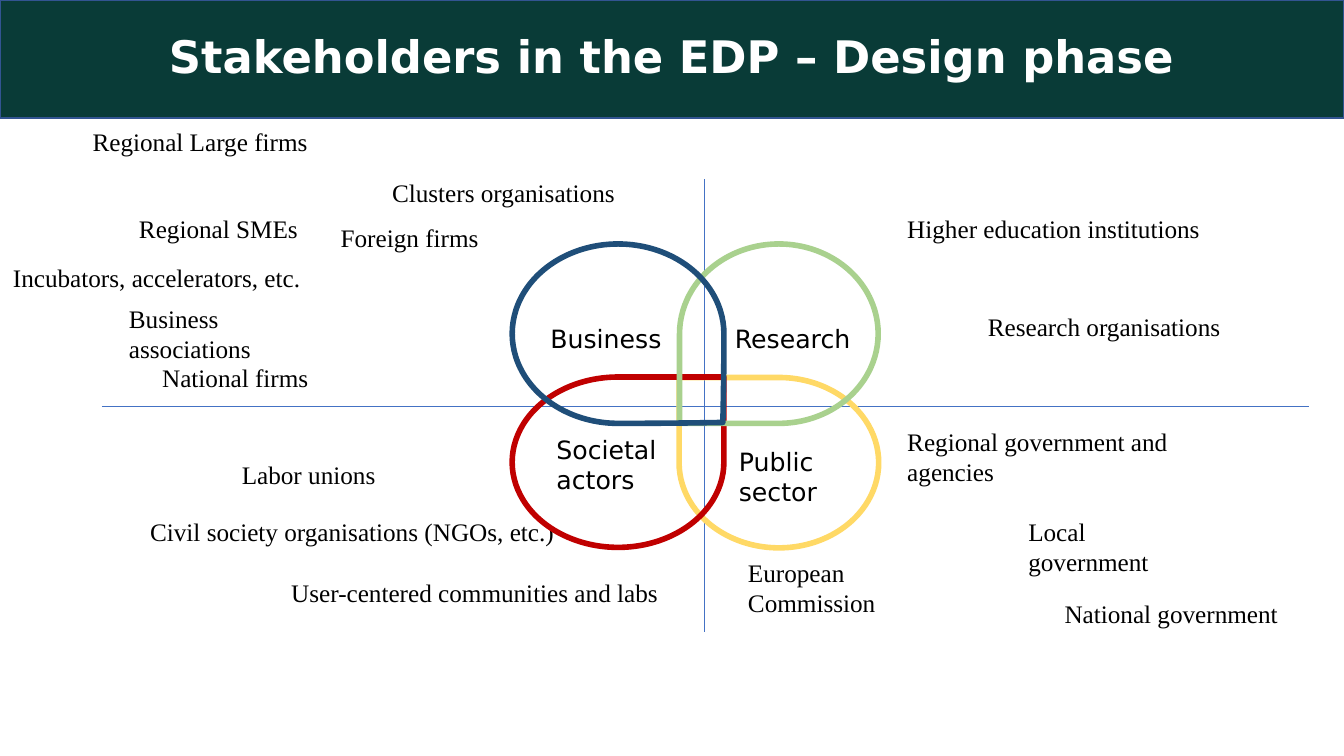
import pptx
import pptx.dml.color
import pptx.enum.shapes
import pptx.enum.text
import pptx.util
from lxml import etree

Inches = pptx.util.Inches
ALIGN = pptx.enum.text.PP_ALIGN

COLORS = {
    "band": "093B37", "band_edge": "325491", "axis": "4472C4",
    "white": "FFFFFF", "black": "000000", "public": "FFD966",
    "societal": "C00000", "research": "A9D18E", "business": "1F4E79",
}
TITLE = "Stakeholders in the EDP – Design phase"
AXES = [(6.99, 1.78, 6.99, 6.27), (1.01, 4.03, 12.98, 4.03)]
STAKEHOLDERS = [
    ("Higher education institutions", 8.9, 2.07, 3.13, ALIGN.JUSTIFY),
    ("Research organisations", 9.7, 3.04, 2.53, ALIGN.JUSTIFY),
    ("Regional government and agencies", 8.9, 4.18, 3.7, ALIGN.LEFT),
    ("Local government", 10.1, 5.07, 2.02, ALIGN.LEFT),
    ("European Commission", 7.32, 5.48, 2.48, ALIGN.LEFT),
    ("National government", 10.46, 5.89, 2.34, ALIGN.LEFT),
    ("Regional SMEs", 1.28, 2.07, 1.79, ALIGN.LEFT),
    ("Regional Large firms", 0.82, 1.2, 2.36, ALIGN.LEFT),
    ("Business associations", 1.18, 2.96, 2.35, ALIGN.LEFT),
    ("Clusters organisations", 3.79, 1.71, 2.43, ALIGN.LEFT),
    ("Incubators, accelerators, etc.", 0.03, 2.55, 3.15, ALIGN.LEFT),
    ("Foreign firms", 3.28, 2.16, 1.58, ALIGN.LEFT),
    ("National firms", 1.51, 3.55, 1.67, ALIGN.LEFT),
    ("Civil society organisations (NGOs, etc.)", 1.39, 5.07, 4.25, ALIGN.JUSTIFY),
    ("Labor unions", 2.3, 4.51, 1.54, ALIGN.JUSTIFY),
    ("User-centered communities and labs", 2.79, 5.68, 3.88, ALIGN.JUSTIFY),
]
PETALS = [
    ("public", 6.88, 3.6, 1.69, 1.98, 270, 1),
    ("societal", 5.08, 3.74, 2.1, 1.69, 0, 1),
    ("research", 6.74, 2.42, 1.97, 1.78, 180, 1),
    ("business", 5.24, 2.26, 1.78, 2.1, 90, 0.99),
]
SECTORS = [
    ("Business", 5.36, 3.16, 1.31, 0.4),
    ("Research", 7.19, 3.16, 1.35, 0.4),
    ("Societal\nactors", 5.42, 4.26, 1.29, 0.71),
    ("Public\nsector", 7.23, 4.38, 0.98, 0.71),
]


def rgb(name):
    return pptx.dml.color.RGBColor.from_string(COLORS[name])


def write(frame, text, *, font, size=18, color="black", bold=False,
          align=ALIGN.LEFT, spacing=None):
    for index, line in enumerate(text.split("\n")):
        paragraph = frame.add_paragraph() if index else frame.paragraphs[0]
        paragraph.alignment = align
        paragraph.line_spacing = spacing
        run = paragraph.add_run()
        run.text = line
        run.font.name = font
        run.font.size = pptx.util.Pt(size)
        run.font.bold = bold
        run.font.color.rgb = rgb(color)


def add_label(slide, text, left, top, width, height, **style):
    box = slide.shapes.add_textbox(*map(Inches, (left, top, width, height)))
    box.text_frame.word_wrap = False
    box.text_frame.auto_size = pptx.enum.text.MSO_AUTO_SIZE.SHAPE_TO_FIT_TEXT
    write(box.text_frame, text, **style)


def add_outlined(shapes, kind, place, line, weight):
    shape = shapes.add_shape(kind, *map(Inches, place))
    shape.shadow.inherit = False
    shape.fill.background()
    shape.line.color.rgb = rgb(line)
    shape.line.width = pptx.util.Pt(weight)
    return shape


def main():
    """Build the stakeholder slide."""
    kinds = pptx.enum.shapes.MSO_SHAPE
    deck = pptx.Presentation()
    deck.slide_width, deck.slide_height = Inches(13.33), Inches(7.5)
    slide = deck.slides.add_slide(deck.slide_layouts[6])

    band = add_outlined(slide.shapes, kinds.RECTANGLE, (0, 0, 13.33, 1.17), "band_edge", 1)
    band.fill.solid()
    band.fill.fore_color.rgb = rgb("band")
    band.text_frame.word_wrap = True
    band.text_frame.vertical_anchor = pptx.enum.text.MSO_ANCHOR.MIDDLE
    write(band.text_frame, TITLE, font="DejaVu Sans", size=32, color="white",
          bold=True, align=ALIGN.CENTER, spacing=0.9)

    for ends in AXES:
        axis = slide.shapes.add_connector(
            pptx.enum.shapes.MSO_CONNECTOR.STRAIGHT, *map(Inches, ends))
        axis.line.color.rgb = rgb("axis")
        axis.line.width = pptx.util.Pt(0.5)
        etree.SubElement(axis.element.spPr, pptx.oxml.ns.qn("a:effectLst"))

    for name, left, top, width, align in STAKEHOLDERS:
        add_label(slide, name, left, top, width, 0.4, font="Times New Roman", align=align)

    flower = slide.shapes.add_group_shape()
    for sector, left, top, width, height, turn, tip in PETALS:
        petal = add_outlined(flower.shapes, kinds.TEAR, (left, top, width, height), sector, 4)
        petal.rotation = turn
        petal.adjustments[0] = tip

    for sector in SECTORS:
        add_label(slide, *sector, font="DejaVu Sans")

    deck.save("out.pptx")


if __name__ == "__main__":
    main()
